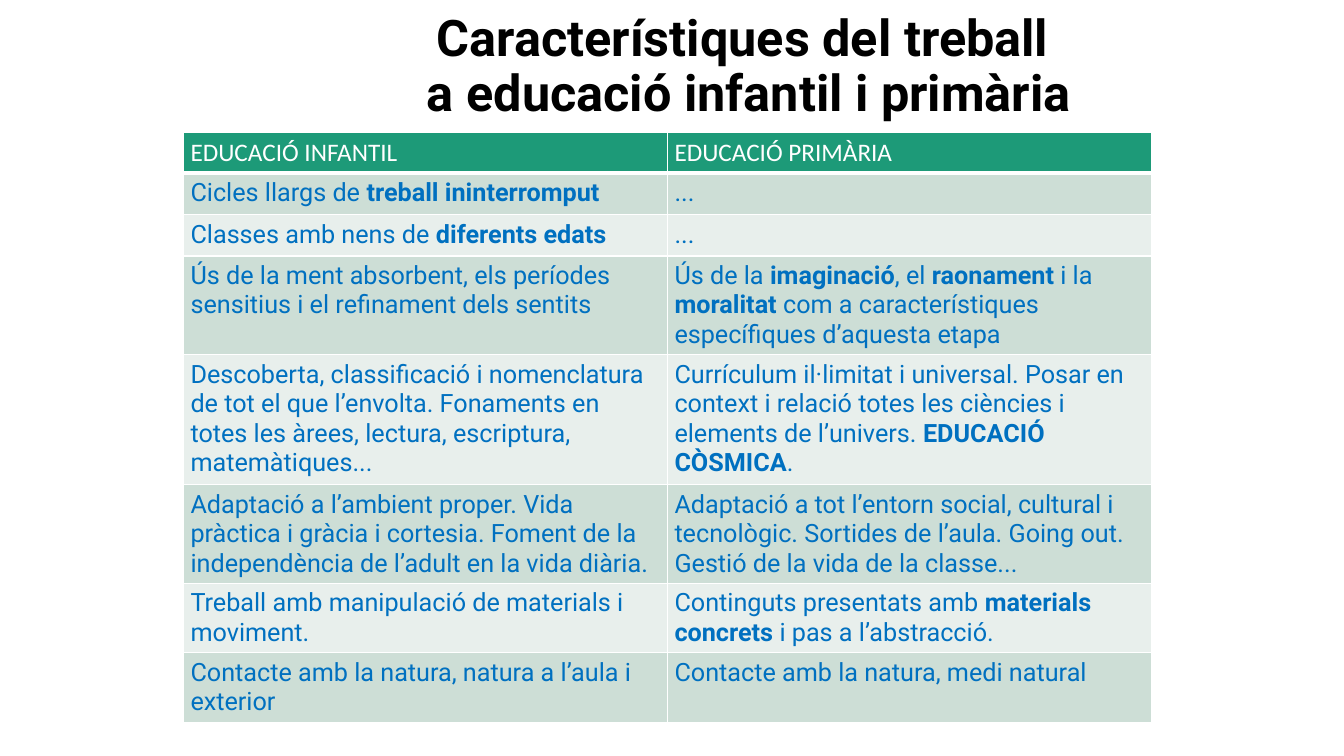
import pptx
import pptx.util
import pptx.dml.color
import pptx.enum.text
import pptx.oxml.ns
import lxml.etree

Inches, Pt = pptx.util.Inches, pptx.util.Pt
RGBColor = pptx.dml.color.RGBColor

TITLE = "Característiques del treball \va educació infantil i primària"
HEADER = ("EDUCACIÓ INFANTIL", "EDUCACIÓ PRIMÀRIA")
ROWS = [
    ("Cicles llargs de *treball ininterromput", "..."),
    ("Classes amb nens de *diferents edats", "..."),
    ("Ús de la ment absorbent, els períodes sensitius i el refinament dels sentits",
     "Ús de la *imaginació*, el *raonament* i la *moralitat *"
     "com a característiques específiques d’aquesta etapa"),
    ("Descoberta, classificació i nomenclatura de tot el que l’envolta. "
     "Fonaments en totes les àrees, lectura, escriptura, matemàtiques...",
     "Currículum il·limitat i universal. Posar en context i relació totes les "
     "ciències i elements de l’univers. *EDUCACIÓ CÒSMICA*."),
    ("Adaptació a l’ambient proper. Vida pràctica i gràcia i cortesia. "
     "Foment de la independència de l’adult en la vida diària.",
     "Adaptació a tot l’entorn social, cultural i tecnològic. Sortides de "
     "l’aula. Going out. Gestió de la vida de la classe..."),
    ("Treball amb manipulació de materials i moviment.",
     "Continguts presentats amb *materials concrets *i pas a l’abstracció."),
    ("Contacte amb la natura, natura a l’aula i exterior",
     "Contacte amb la natura, medi natural"),
]

BLACK = RGBColor(0x00, 0x00, 0x00)
WHITE = RGBColor(0xFF, 0xFF, 0xFF)
GREEN = RGBColor(0x1D, 0x9A, 0x78)
BLUE = RGBColor(0x00, 0x70, 0xC0)
BANDS = (RGBColor(0xCD, 0xDE, 0xD6), RGBColor(0xE8, 0xEF, 0xEC))

COL_W, ROW_H, TALL_H, TALL_ROW = 4.8, 0.41, 1.29, 4
TITLE_BOX = dict(left=1.64, top=0.52, width=11.58, height=0.69)
TITLE_INSETS = dict(margin_left=0, margin_top=0.05, margin_right=0, margin_bottom=0)
CELL_INSETS = dict(margin_left=0.07, margin_top=0.05, margin_right=0.07, margin_bottom=0.05)
TITLE_FONT = dict(name="Roboto", size=Pt(36), bold=True)
HEAD_FONT = dict(name="Calibri", size=Pt(18))
BODY_FONT = dict(name="Roboto", size=Pt(18))


def set_inches(obj, values):
    for key, value in values.items():
        setattr(obj, key, Inches(value))


def set_font(font, values, color):
    for key, value in values.items():
        setattr(font, key, value)
    font.color.rgb = color


def add_borders(cell, bottom):
    tcPr = cell._tc.get_or_add_tcPr()
    qn = pptx.oxml.ns.qn
    for i, (side, width) in enumerate((("lnL", 1), ("lnR", 1), ("lnT", 1), ("lnB", bottom))):
        ln = lxml.etree.Element(qn("a:" + side), w=str(Pt(width)))
        fill = lxml.etree.SubElement(ln, qn("a:solidFill"))
        lxml.etree.SubElement(fill, qn("a:srgbClr"), val=str(WHITE))
        tcPr.insert(i, ln)


def fill_cell(cell, text, fill, font, color, bottom=1):
    set_inches(cell, CELL_INSETS)
    cell.fill.solid()
    cell.fill.fore_color.rgb = fill
    p = cell.text_frame.paragraphs[0]
    for i, part in enumerate(text.split("*")):
        if part:
            r = p.add_run()
            r.text = part
            set_font(r.font, dict(font, bold=i % 2 == 1), color)
    add_borders(cell, bottom)


def main():
    prs = pptx.Presentation()
    prs.slide_width, prs.slide_height = Inches(13.33), Inches(7.5)
    s = prs.slides.add_slide(prs.slide_layouts[5])

    title = s.shapes.title
    set_inches(title, TITLE_BOX)
    tf = title.text_frame
    set_inches(tf, TITLE_INSETS)
    tf.word_wrap = True
    tf.auto_size = pptx.enum.text.MSO_AUTO_SIZE.NONE
    tf.vertical_anchor = pptx.enum.text.MSO_ANCHOR.BOTTOM
    p = tf.paragraphs[0]
    p.text = TITLE
    p.alignment = pptx.enum.text.PP_ALIGN.CENTER
    p.line_spacing = 0.9
    for r in p.runs:
        set_font(r.font, TITLE_FONT, BLACK)

    count = len(ROWS) + 1
    height = ROW_H * (count - 1) + TALL_H
    table = s.shapes.add_table(count, 2, Inches(1.82), Inches(1.31),
                               Inches(2 * COL_W), Inches(height)).table
    for col in table.columns:
        col.width = Inches(COL_W)
    for i, row in enumerate(table.rows):
        row.height = Inches(TALL_H if i == TALL_ROW else ROW_H)
    for c, text in enumerate(HEADER):
        fill_cell(table.cell(0, c), text, GREEN, HEAD_FONT, WHITE, bottom=3)
    for i, texts in enumerate(ROWS):
        for c, text in enumerate(texts):
            fill_cell(table.cell(i + 1, c), text, BANDS[i % 2], BODY_FONT, BLUE)

    prs.save("out.pptx")


if __name__ == "__main__":
    main()
